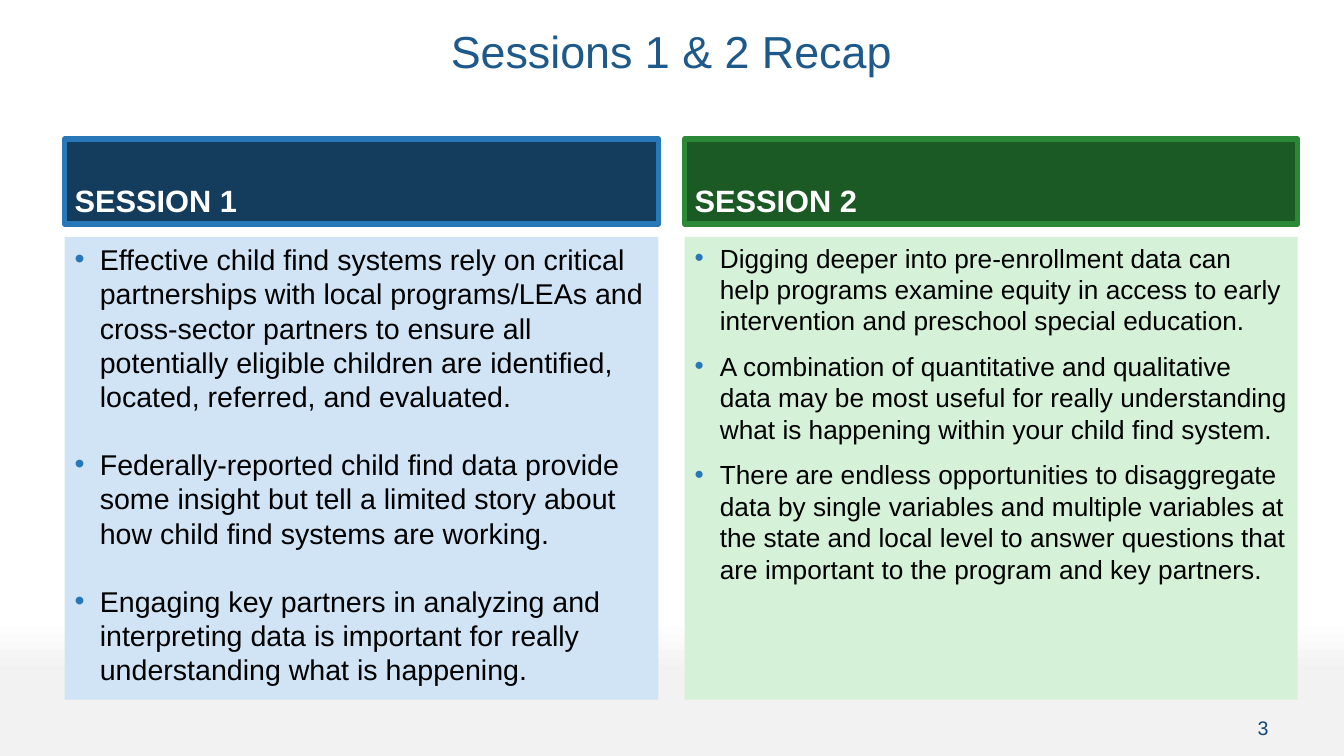
from lxml import etree
from pptx import Presentation
from pptx.dml.color import RGBColor
from pptx.enum import text
from pptx.oxml.ns import qn
from pptx.util import Inches, Pt

# Content
TITLE = "Sessions 1 & 2 Recap"
PAGE_NUMBER = "3"
SESSIONS = [
    dict(heading="SESSION 1", left=0.64, width=5.89, size=20.4,
         before=0, after=24,
         dark="133C5D", border="2777B9", pale="D0E4F5",
         points=[
             "Effective child find systems rely on critical partnerships with "
             "local programs/LEAs and cross-sector partners to ensure all "
             "potentially eligible children are identified, located, referred, "
             "and evaluated.",
             "Federally-reported child find data provide some insight but tell "
             "a limited story about how child find systems are working.",
             "Engaging key partners in analyzing and interpreting data is "
             "important for really understanding what is happening.",
         ]),
    dict(heading="SESSION 2", left=6.79, width=6.08, size=18.7,
         before=10, after=0,
         dark="1C5A25", border="2A8837", pale="D5F2D9",
         points=[
             "Digging deeper into pre-enrollment data can help programs "
             "examine equity in access to early intervention and preschool "
             "special education.",
             "A combination of quantitative and qualitative data may be most "
             "useful for really understanding what is happening within your "
             "child find system.",
             "There are endless opportunities to disaggregate data by single "
             "variables and multiple variables at the state and local level to "
             "answer questions that are important to the program and key "
             "partners.",
         ]),
]
HEADING_TOP, HEADING_HEIGHT = 1.38, 0.84
BODY_TOP, BODY_HEIGHT = 2.35, 4.59
BULLET_COLOR = "2777B9"
BULLET_INDENT = 0.25


def rgb(value):
    return RGBColor.from_string(value)


def place(s, left, top, width, height, anchor):
    s.left, s.top = Inches(left), Inches(top)
    s.width, s.height = Inches(width), Inches(height)
    tf = s.text_frame
    tf.word_wrap = True
    tf.auto_size = text.MSO_AUTO_SIZE.NONE
    tf.vertical_anchor = anchor
    return tf


def fill(s, color):
    s.fill.solid()
    s.fill.fore_color.rgb = rgb(color)


def add_run(p, words, size, color, bold=False):
    r = p.add_run()
    r.text = words
    r.font.name = "Arial"
    r.font.size = Pt(size)
    r.font.bold = bold
    r.font.color.rgb = rgb(color)


def add_bullet(p):
    pPr = p._p.get_or_add_pPr()
    pPr.set("marL", str(Inches(BULLET_INDENT)))
    pPr.set("indent", str(-Inches(BULLET_INDENT)))
    color = etree.SubElement(pPr, qn("a:buClr"))
    etree.SubElement(color, qn("a:srgbClr"), val=BULLET_COLOR)
    etree.SubElement(pPr, qn("a:buFont"), typeface="Arial")
    etree.SubElement(pPr, qn("a:buChar"), char="•")


def add_heading(s, session):
    tf = place(s, session["left"], HEADING_TOP, session["width"],
               HEADING_HEIGHT, text.MSO_ANCHOR.BOTTOM)
    fill(s, session["dark"])
    s.line.color.rgb = rgb(session["border"])
    s.line.width = Pt(4)
    etree.SubElement(s.line._ln, qn("a:round"))
    p = tf.paragraphs[0]
    p.space_before = Pt(0)
    add_run(p, session["heading"], 22, "FFFFFF", bold=True)


def add_points(s, session):
    tf = place(s, session["left"], BODY_TOP, session["width"],
               BODY_HEIGHT, text.MSO_ANCHOR.TOP)
    fill(s, session["pale"])
    last = len(session["points"]) - 1
    for i, point in enumerate(session["points"]):
        p = tf.add_paragraph() if i else tf.paragraphs[0]
        add_bullet(p)
        p.space_before = Pt(session["before"] if i else 0)
        p.space_after = Pt(session["after"] if i < last else 0)
        add_run(p, point, session["size"], "000000")


def main():
    prs = Presentation()
    prs.slide_width, prs.slide_height = Inches(13.33), Inches(7.5)
    slide = prs.slides.add_slide(prs.slide_layouts.get_by_name("Comparison"))

    # Background: white fading to light grey near the bottom
    background = slide.background.fill
    background.gradient()
    background.gradient_angle = 270
    for stop, (position, color) in zip(background.gradient_stops,
                                       [(0.82, "FFFFFF"), (0.89, "F2F2F2")]):
        stop.position = position
        stop.color.rgb = rgb(color)

    # Title
    title, *boxes = slide.placeholders
    tf = place(title, 0.64, 0.25, 12.04, 1, text.MSO_ANCHOR.TOP)
    p = tf.paragraphs[0]
    p.alignment = text.PP_ALIGN.CENTER
    p.line_spacing = 0.9
    add_run(p, TITLE, 32, "1D598B")

    # One heading and one list per session
    for session, heading, body in zip(SESSIONS, boxes[::2], boxes[1::2]):
        add_heading(heading, session)
        add_points(body, session)

    # Page number
    number = slide.shapes.add_textbox(0, 0, 0, 0)
    tf = place(number, 11.33, 6.94, 1.35, 0.55, text.MSO_ANCHOR.MIDDLE)
    p = tf.paragraphs[0]
    p.alignment = text.PP_ALIGN.RIGHT
    add_run(p, PAGE_NUMBER, 14, "104578")

    prs.save("out.pptx")


if __name__ == "__main__":
    main()
